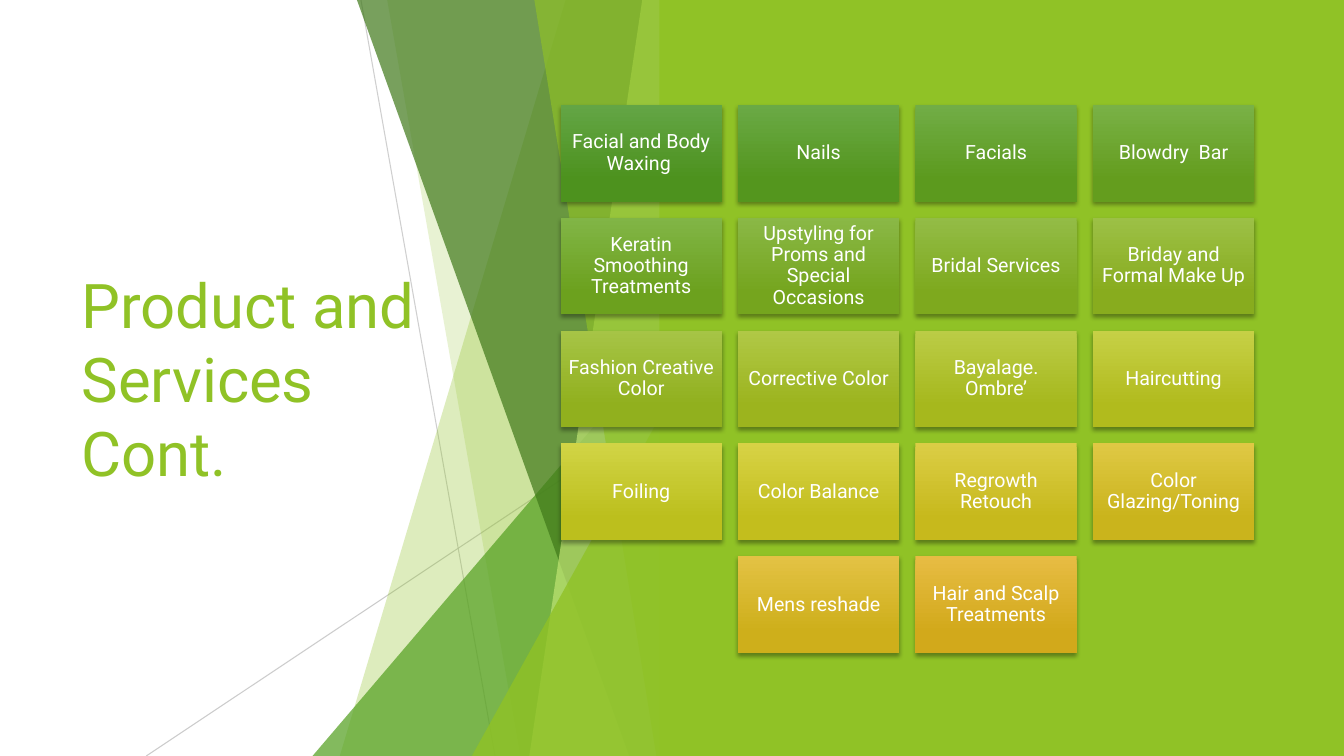
import colorsys
from dataclasses import dataclass

from lxml import etree
from pptx import Presentation
from pptx.dml.color import RGBColor
from pptx.enum.shapes import MSO_CONNECTOR, MSO_SHAPE
from pptx.enum.text import MSO_ANCHOR, MSO_AUTO_SIZE, PP_ALIGN
from pptx.oxml.ns import qn
from pptx.util import Inches, Pt

STRAIGHT = MSO_CONNECTOR.STRAIGHT
RECTANGLE = MSO_SHAPE.RECTANGLE
TRIANGLE = MSO_SHAPE.ISOSCELES_TRIANGLE
MIDDLE = MSO_ANCHOR.MIDDLE
LEFT, CENTER = PP_ALIGN.LEFT, PP_ALIGN.CENTER
TITLE_ONLY = 5


@dataclass(frozen=True)
class Theme:
    font: str = "Roboto"
    title_size: int = 44
    tile_size: int = 14
    lime: str = "90C226"
    green: str = "54A021"
    forest: str = "3F7819"
    pale: str = "C0E474"
    hairline: str = "BFBFBF"
    white: str = "FFFFFF"
    shadow: str = "000000"
    # First and last tile colours, at the top and bottom of each gradient
    tile_tops: tuple = ("63A545", "E7BC43")
    tile_bottoms: tuple = ("4D921E", "D2A91B")


THEME = Theme()

SERVICES = [
    "Facial and Body Waxing ", "Nails", "Facials", "Blowdry  Bar",
    "Keratin Smoothing Treatments", "Upstyling for Proms and Special Occasions",
    "Bridal Services", "Briday and Formal Make Up",
    "Fashion Creative Color", "Corrective Color", "Bayalage. Ombre’", "Haircutting",
    "Foiling", "Color Balance", "Regrowth Retouch", "Color Glazing/Toning",
    "Mens reshade", "Hair and Scalp Treatments",
]


def rgb(code):
    return RGBColor.from_string(code)


def set_alpha(shape, percent):
    for colour in shape.element.iter(qn("a:srgbClr")):
        etree.SubElement(colour, qn("a:alpha")).set("val", str(percent * 1000))


def fill_flat(shape, colour, alpha=100):
    shape.shadow.inherit = False
    shape.fill.solid()
    shape.fill.fore_color.rgb = rgb(colour)
    shape.line.fill.background()
    if alpha < 100:
        set_alpha(shape, alpha)


def blend(ends, share):
    """Mix two colours along the hue circle, so that green passes through yellow."""
    first, last = (colorsys.rgb_to_hsv(*(part / 255 for part in rgb(code))) for code in ends)
    mixed = (a + (b - a) * share for a, b in zip(first, last))
    return RGBColor(*(round(part * 255) for part in colorsys.hsv_to_rgb(*mixed)))


def format_text(frame, size, colour, alignment):
    frame.word_wrap = True
    frame.vertical_anchor = MIDDLE
    for paragraph in frame.paragraphs:
        paragraph.alignment = alignment
        for run in paragraph.runs:
            run.font.name = THEME.font
            run.font.size = Pt(size)
            run.font.color.rgb = rgb(colour)


def add_title(slide, left, top, width, height):
    title = slide.shapes.title
    title.left, title.top, title.width, title.height = left, top, width, height
    title.text_frame.text = "Product and Services Cont."
    title.text_frame.auto_size = MSO_AUTO_SIZE.NONE
    format_text(title.text_frame, THEME.title_size, THEME.lime, LEFT)


def add_hairline(slide, start, end, alpha):
    hairline = slide.shapes.add_connector(STRAIGHT, *start, *end)
    hairline.line.color.rgb = rgb(THEME.hairline)
    hairline.line.width = Pt(0.75)
    set_alpha(hairline, alpha)
    etree.SubElement(hairline.element.spPr, qn("a:effectLst"))


def add_facets(slide, right, top, bottom):
    """Draw the overlapping shards, all measured leftwards from their shared right edge."""

    def inset(distance):
        return right - Inches(distance)

    def add_shard(top_inset, bottom_inset, colour, alpha):
        outline = slide.shapes.build_freeform(inset(top_inset), top, scale=1.0)
        outline.add_line_segments([(right, top), (right, bottom), (inset(bottom_inset), bottom)])
        fill_flat(outline.convert_to_shape(), colour, alpha)

    def add_wedge(width, height, colour, alpha):
        wedge = slide.shapes.add_shape(TRIANGLE, inset(width), bottom - Inches(height),
                                       Inches(width), Inches(height))
        wedge.adjustments[0] = 1
        fill_flat(wedge, colour, alpha)

    add_hairline(slide, (inset(3.08), top), (inset(1.75), bottom), 75)
    add_hairline(slide, (right, bottom - Inches(3.47)), (inset(5.21), bottom), 80)
    add_shard(1.05, 3.29, THEME.lime, 30)
    add_shard(2.82, 1.5, THEME.lime, 20)
    add_wedge(3.56, 4.17, THEME.green, 72)
    add_shard(3.12, 0.42, THEME.forest, 70)
    add_shard(0.29, 1.41, THEME.pale, 70)
    add_shard(1.36, 0.15, THEME.lime, 65)
    add_wedge(1.98, 3.57, THEME.lime, 80)


def add_panel(slide, left, top, width, height):
    panel = slide.shapes.add_shape(RECTANGLE, left, top, width, height)
    fill_flat(panel, THEME.lime)


def add_tile_shadow(tile):
    tile.shadow.inherit = False
    effects = tile.element.spPr.find(qn("a:effectLst"))
    shadow = etree.SubElement(effects, qn("a:outerShdw"), blurRad=str(Pt(3)),
                              dist=str(Pt(2)), dir="5400000", rotWithShape="0")
    colour = etree.SubElement(shadow, qn("a:srgbClr"), val=THEME.shadow)
    etree.SubElement(colour, qn("a:alpha"), val="35000")


def add_tile(slide, service, share, left, top, width, height):
    tile = slide.shapes.add_shape(RECTANGLE, left, top, width, height)
    add_tile_shadow(tile)
    tile.line.fill.background()
    tile.fill.gradient()
    tile.fill.gradient_angle = 270
    upper, lower = tile.fill.gradient_stops
    upper.position, lower.position = 0, 0.78
    upper.color.rgb = blend(THEME.tile_tops, share)
    lower.color.rgb = blend(THEME.tile_bottoms, share)

    label = tile.text_frame
    label.text = service
    label.margin_left = label.margin_right = Inches(0.06)
    label.margin_top = label.margin_bottom = Inches(0.06)
    label.paragraphs[0].line_spacing = 0.9
    format_text(label, THEME.tile_size, THEME.white, CENTER)


def add_service_grid(slide, left, top, width, height, columns=4, gap=Inches(0.16)):
    """Lay the services out in rows, with a short last row centred."""
    rows = -(-len(SERVICES) // columns)
    tile_width = (width - gap * (columns - 1)) // columns
    tile_height = (height - gap * (rows - 1)) // rows
    for index, service in enumerate(SERVICES):
        row, column = divmod(index, columns)
        in_row = min(columns, len(SERVICES) - row * columns)
        indent = (columns - in_row) / 2
        add_tile(slide, service, index / (len(SERVICES) - 1),
                 left + int((column + indent) * (tile_width + gap)),
                 top + row * (tile_height + gap), tile_width, tile_height)


def main():
    deck = Presentation()
    deck.slide_width, deck.slide_height = Inches(13.33), Inches(7.5)
    slide = deck.slides.add_slide(deck.slide_layouts[TITLE_ONLY])
    add_title(slide, Inches(0.71), Inches(1.51), Inches(3.88), Inches(4.48))
    add_facets(slide, Inches(6.66), Inches(0), deck.slide_height)
    add_panel(slide, Inches(6.54), Inches(0), Inches(6.79), deck.slide_height)
    add_service_grid(slide, Inches(5.56), Inches(1.04), Inches(6.88), Inches(5.44))
    deck.save("out.pptx")


if __name__ == "__main__":
    main()
